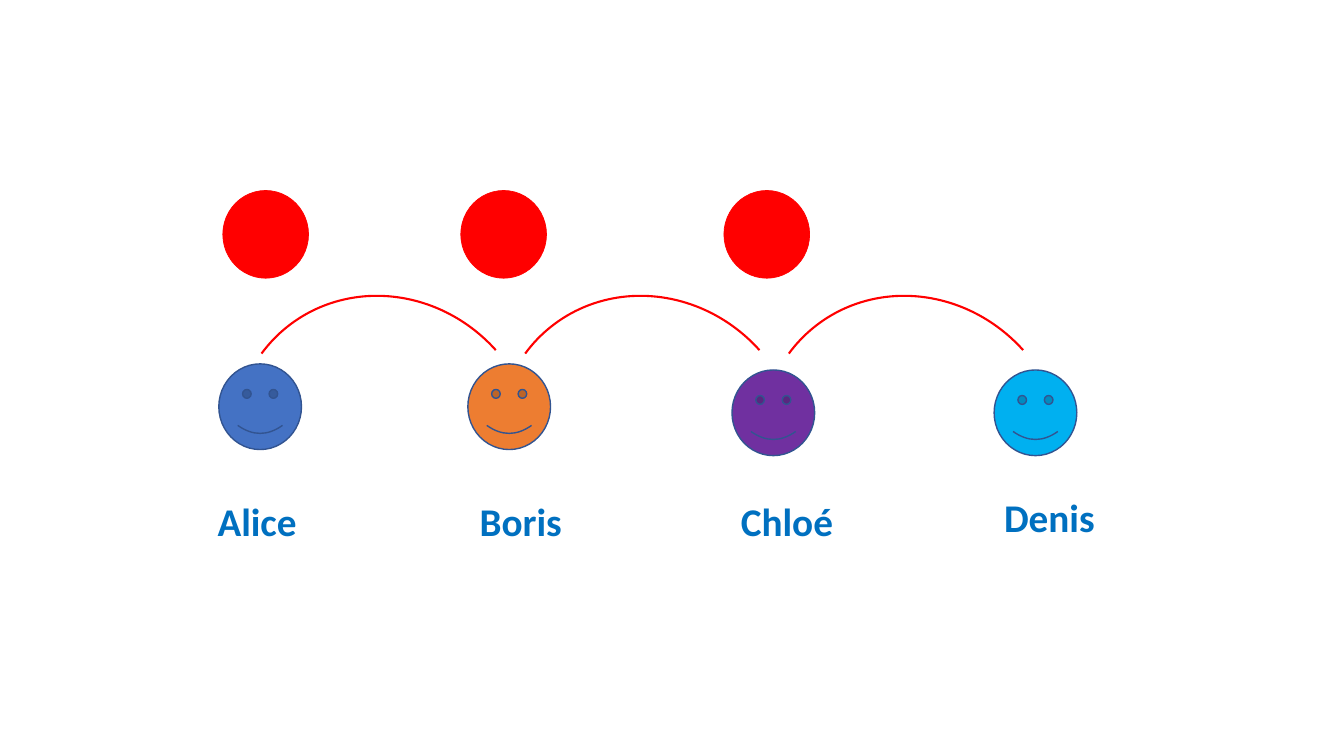
from pptx import Presentation
from pptx.dml.color import RGBColor
from pptx.enum.shapes import MSO_SHAPE as SHAPE
from pptx.enum.text import MSO_AUTO_SIZE as AUTO
from pptx.util import Inches, Pt

PEOPLE = [
    ("Alice", "4472C4", 2.17, 3.61, (2.06, 4.88, 1, 0.57)),
    ("Boris", "ED7D31", 4.64, 3.61, (4.66, 4.88, 1.03, 0.57)),
    ("Chloé", "7030A0", 7.26, 3.67, (7.25, 4.88, 1.13, 0.57)),
    ("Denis", "00B0F0", 9.86, 3.67, (9.86, 4.84, 1.11, 0.57)),
]
BALL_LEFTS = [2.21, 4.57, 7.18]
RED = "FF0000"


def rgb(value):
    """Return the colour of a hex string."""
    return RGBColor.from_string(value)


def add_outlined(shapes, kind, box, fill, line, width):
    """Add a preset shape with the given fill and outline."""
    sp = shapes.add_shape(kind, *map(Inches, box))
    sp.shadow.inherit = False
    if fill:
        sp.fill.solid()
        sp.fill.fore_color.rgb = rgb(fill)
    else:
        sp.fill.background()
    sp.line.color.rgb = rgb(line)
    sp.line.width = Pt(width)
    return sp


def add_name(shapes, box, text):
    """Add a person's name."""
    tf = shapes.add_textbox(*map(Inches, box)).text_frame
    tf.word_wrap = False
    tf.auto_size = AUTO.SHAPE_TO_FIT_TEXT
    r = tf.paragraphs[0].add_run()
    r.text = text
    for key, value in {"name": "Calibri", "size": Pt(28), "bold": True}.items():
        setattr(r.font, key, value)
    r.font.color.rgb = rgb("0070C0")


def add_people(shapes):
    """Add the group of faces with their names."""
    group = shapes.add_group_shape().shapes
    for _, fill, left, top, _ in PEOPLE:
        add_outlined(group, SHAPE.SMILEY_FACE, (left, top, 0.82, 0.85), fill, "325491", 1)
    for name, _, _, _, box in PEOPLE:
        add_name(group, box, name)


def add_balls(shapes, top):
    """Add the row of red balls."""
    for left in BALL_LEFTS:
        add_outlined(shapes, SHAPE.OVAL, (left, top, 0.85, 0.87), RED, RED, 0.5)


def add_throws(shapes, left, top, step):
    """Add the arcs that lead from each person to the next."""
    for i in range(len(PEOPLE) - 1):
        box = (left + i * step, top, 3.13, 2.95)
        sp = add_outlined(shapes, SHAPE.ARC, box, None, RED, 1.5)
        sp.adjustments[0], sp.adjustments[1] = 164.18, 8.11
        sp.rotation = 51.4
        sp.element.spPr.get_or_add_xfrm().set("flipH", "1")


def main():
    """Build and save the slide."""
    prs = Presentation()
    prs.slide_width, prs.slide_height = Inches(13.33), Inches(7.5)
    shapes = prs.slides.add_slide(prs.slide_layouts[6]).shapes
    add_people(shapes)
    add_balls(shapes, 1.89)
    add_throws(shapes, 2.26, 2.99, 2.615)
    prs.save("out.pptx")


if __name__ == "__main__":
    main()
